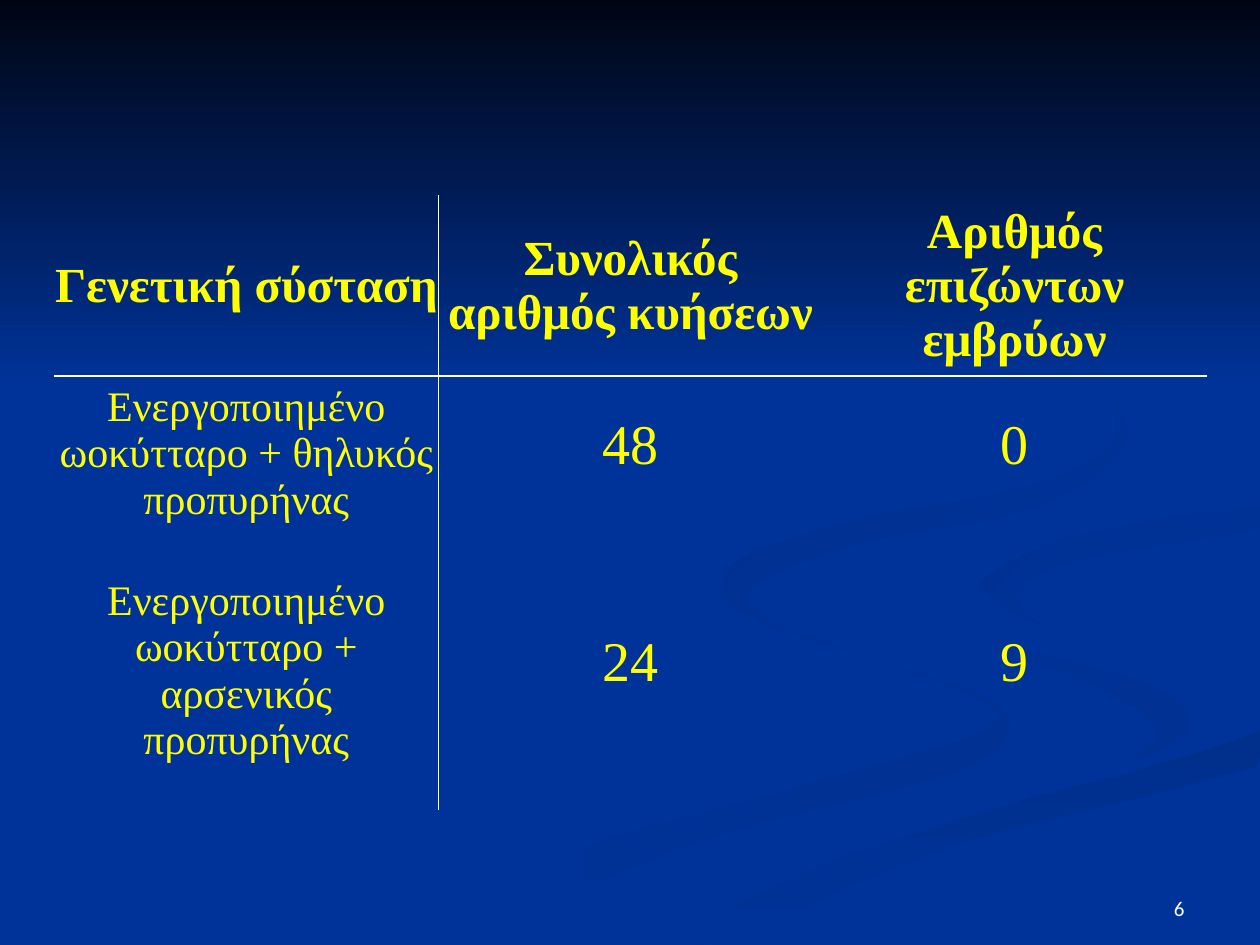
from lxml import etree
from pptx import Presentation
from pptx.dml.color import RGBColor
from pptx.enum.text import MSO_ANCHOR, PP_ALIGN
from pptx.oxml.ns import qn
from pptx.util import Pt

MID = MSO_ANCHOR.MIDDLE
LOW = MSO_ANCHOR.BOTTOM
MID_X = PP_ALIGN.CENTER
RIGHT = PP_ALIGN.RIGHT
SERIF = "Times New Roman"
SANS = "Calibri"
PLAIN = "{2D5ABB26-0587-4C30-8999-92F81FD0307C}"
LEAD = 1.11
STEPS = 5

HUES = {
    "back": "003399",
    "night": "000514",
    "text": "FFFF00",
    "rule": "FFFFFF",
    "bend": "003193",
    "tail": "002F8C",
    "edge": "003091",
    "loop": "002F8E",
}

SWIRLS = [
    ("back", "bend", 0, [
        (562, 398), (491, 374), (428, 349), (414, 330), (418, 348), (489, 374), (562, 400),
        (557, 420), (444, 453), (330, 485), (216, 539), (260, 539), (406, 479), (544, 442),
        (576, 418)]),
    ("back", "bend", 45, [
        (679, 410), (652, 389), (557, 362), (521, 334), (537, 360), (625, 392), (661, 418),
        (644, 436), (671, 424)]),
    ("tail", "back", 90, [
        (362, 539), (411, 539), (541, 484), (718, 438), (718, 418), (598, 453), (454, 499)]),
    ("back", "back", 0, [
        (522, 334), (546, 359), (652, 389), (679, 410), (656, 432), (535, 463), (343, 539),
        (374, 538), (501, 482), (719, 418), (719, 387), (624, 366), (562, 333), (612, 307),
        (719, 289), (719, 279), (582, 300)]),
    ("edge", "back", 45, [
        (562, 331), (570, 344), (595, 357), (580, 340), (618, 319), (719, 302), (719, 289),
        (611, 307)]),
    ("loop", "back", 45, [
        (492, 310), (594, 289), (644, 248), (607, 198), (549, 168), (616, 205), (639, 246),
        (598, 275), (487, 298), (420, 321), (420, 345), (448, 360), (427, 338)]),
]

ROWS = [
    (103.4, ["Γενετική σύσταση", "Συνολικός αριθμός κυήσεων", "Αριθμός επιζώντων εμβρύων"]),
    (115.2, ["Ενεργοποιημένο ωοκύτταρο + θηλυκός προπυρήνας", "48", "0"]),
    (132.8, ["Ενεργοποιημένο ωοκύτταρο + αρσενικός προπυρήνας", "24", "9"]),
]


def hue(name):
    return RGBColor.from_string(HUES[name])


def write(frame, text, size, font, tint, align, bold=False):
    para = frame.paragraphs[0]
    para.alignment = align
    run = para.add_run()
    run.text = text
    run.font.size = Pt(size)
    run.font.name = font
    run.font.bold = bold
    run.font.color.rgb = hue(tint)


def blend(a, b, c, d, t):
    bow = 2 * b + (c - a) * t
    bow += (2 * a - 5 * b + 4 * c - d) * t ** 2
    return (bow + (3 * b - a - 3 * c + d) * t ** 3) / 2


def smooth(knots, right, low):
    points = []
    for i in range(len(knots)):
        near = [knots[(i + k) % len(knots)] for k in (-1, 0, 1, 2)]
        for step in range(STEPS):
            x, y = (blend(*axis, step / STEPS) for axis in zip(*near))
            points.append((min(x, right), min(y, low)))
    return points


def paint(shape, start, end, angle):
    shape.shadow.inherit = False
    shape.line.fill.background()
    if start == end:
        shape.fill.solid()
        shape.fill.fore_color.rgb = hue(start)
        return
    shape.fill.gradient()
    shape.fill.gradient_angle = (360 - angle) % 360
    for stop, name in zip(shape.fill.gradient_stops, (start, end)):
        stop.color.rgb = hue(name)


def draw_swirls(slide, left, top, width, height):
    for start, end, angle, knots in SWIRLS:
        points = smooth(knots, width, height)
        pen = slide.shapes.build_freeform(*points[0], scale=Pt(1))
        pen.add_line_segments(points[1:], close=True)
        paint(pen.convert_to_shape(Pt(left), Pt(top)), start, end, angle)


def draw_sky(slide, left, top, width, height):
    pen = slide.shapes.build_freeform(0, 0, scale=Pt(1))
    pen.add_line_segments([(0, height), (width, height), (width, 0)], close=True)
    paint(pen.convert_to_shape(Pt(left), Pt(top)), "night", "back", 90)


def rule(cell, sides):
    props = cell._tc.get_or_add_tcPr()
    for side in "LRTB":
        line = etree.SubElement(props, qn("a:ln" + side), w=str(Pt(1)))
        if side in sides:
            fill = etree.SubElement(line, qn("a:solidFill"))
            etree.SubElement(fill, qn("a:srgbClr"), val=HUES["rule"])
        else:
            etree.SubElement(line, qn("a:noFill"))


def draw_table(slide, left, top, width):
    high = sum(row[0] for row in ROWS)
    count = len(ROWS[0][1])
    frame = slide.shapes.add_table(len(ROWS), count, Pt(left), Pt(top), Pt(width), Pt(high))
    table = frame.table
    table.first_row = table.horz_banding = False
    table._tbl.tblPr.find(qn("a:tableStyleId")).text = PLAIN
    for col in table.columns:
        col.width = Pt(width / count)
    for r, (tall, texts) in enumerate(ROWS):
        table.rows[r].height = Pt(tall)
        for c, text in enumerate(texts):
            head = r == 0
            size = 28 if head else 24 if c == 0 else 32
            cell = table.cell(r, c)
            cell.margin_left = cell.margin_right = cell.margin_top = 0
            cell.margin_bottom = 0 if head else Pt(size * LEAD)
            cell.vertical_anchor = MID
            sides = {0: "R", 1: "L"}.get(c, "") + {0: "B", 1: "T"}.get(r, "")
            rule(cell, sides)
            cell.fill.background()
            write(cell.text_frame, text, size, SERIF, "text", MID_X, head)


def draw_page(slide, left, top, width, height):
    box = slide.shapes.add_textbox(Pt(left), Pt(top), Pt(width), Pt(height))
    frame = box.text_frame
    frame.word_wrap = True
    frame.vertical_anchor = LOW
    write(frame, "6", 12, SANS, "rule", RIGHT)


def main():
    deck = Presentation()
    deck.slide_width, deck.slide_height = Pt(720), Pt(540)
    slide = deck.slides.add_slide(deck.slide_layouts[6])
    slide.background.fill.solid()
    slide.background.fill.fore_color.rgb = hue("back")
    draw_swirls(slide, 0, 0, 720, 540)
    draw_sky(slide, 0, 0, 720, 222)
    draw_table(slide, 31, 111.6, 658.5)
    draw_page(slide, 516, 492, 168, 37.5)
    deck.save("out.pptx")


if __name__ == "__main__":
    main()
